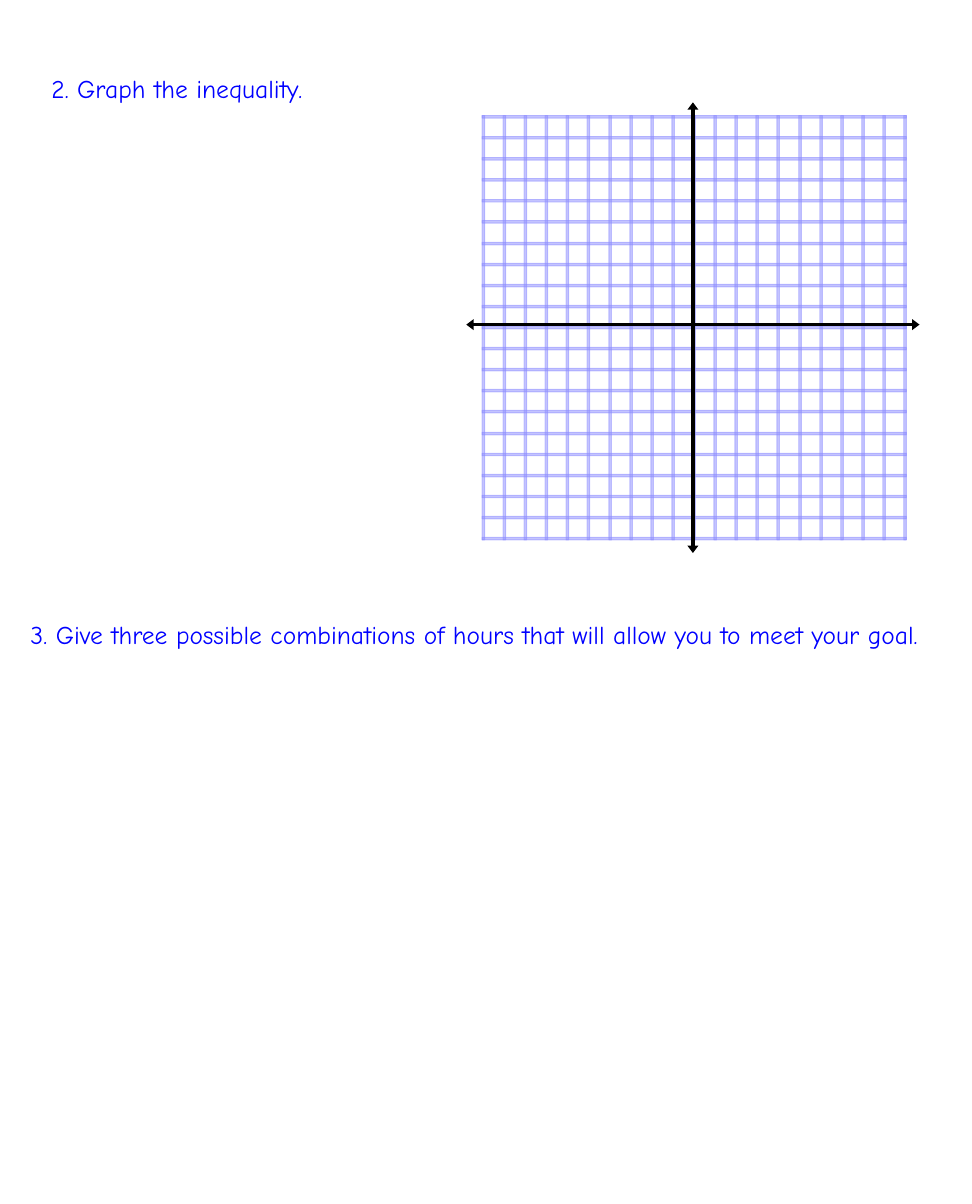
from pptx import Presentation
from pptx import util as u
from pptx.dml.color import RGBColor
from pptx.enum import shapes, text
from pptx.oxml.ns import qn
from lxml import etree

PX = u.Inches(1) // 100
FONT = "Comic Neue"
TEXT_BLUE = "0000FF"
GRID_BLUE = "8C8CFF"
BLACK = "000000"

CELLS = 20
GRID_LEFT, GRID_TOP = 551, 132
GRID_SIZE = 482
BAR = 3


def px(n):
    return u.Emu(n * PX)


def rgb(value):
    return RGBColor.from_string(value)


def add_text(slide, content, x, y, w, h, size=21, color=TEXT_BLUE, font=FONT):
    s = slide.shapes.add_textbox(px(x), px(y), px(w), px(h))
    tf = s.text_frame
    tf.word_wrap = True
    tf.auto_size = text.MSO_AUTO_SIZE.SHAPE_TO_FIT_TEXT
    r = tf.paragraphs[0].add_run()
    r.text = content
    r.font.size = u.Pt(size)
    r.font.name = font
    r.font.color.rgb = rgb(color)


def add_bar(group, x, y, w, h, color=GRID_BLUE, opacity=51):
    s = group.shapes.add_shape(shapes.MSO_SHAPE.RECTANGLE, px(x), px(y), px(w), px(h))
    s.shadow.inherit = False
    s.fill.solid()
    s.fill.fore_color.rgb = rgb(color)
    s.line.color.rgb = rgb(color)
    s.line.width = u.Pt(0)
    for clr in s._element.spPr.iter(qn("a:srgbClr")):
        etree.SubElement(clr, qn("a:alpha"), val=str(opacity * 1000))


def add_axis(group, x1, y1, x2, y2, color=BLACK, width=3):
    s = group.shapes.add_connector(
        shapes.MSO_CONNECTOR.STRAIGHT, px(x1), px(y1), px(x2), px(y2))
    s.line.color.rgb = rgb(color)
    s.line.width = u.Pt(width)
    ln = s.line._get_or_add_ln()
    for end in ("a:headEnd", "a:tailEnd"):
        etree.SubElement(ln, qn(end), type="triangle", w="med", len="sm")
    etree.SubElement(s._element.spPr, qn("a:effectLst"))


def add_grid(slide):
    group = slide.shapes.add_group_shape()
    for i in range(CELLS + 1):
        offset = round(i * GRID_SIZE / CELLS)
        add_bar(group, GRID_LEFT + offset, GRID_TOP, BAR, GRID_SIZE + BAR)
        add_bar(group, GRID_LEFT, GRID_TOP + offset, GRID_SIZE + BAR, BAR)
    add_axis(group, 792, 632, 792, 117)
    add_axis(group, 533, 371, 1051, 371)


def main():
    prs = Presentation()
    prs.slide_width, prs.slide_height = px(1111), px(1376)
    slide = prs.slides.add_slide(prs.slide_layouts[6])
    add_text(slide, "2. Graph the inequality.", 49, 79, 472, 45)
    add_text(slide, "3. Give three possible combinations of hours that will allow you to meet your goal.",
             25, 703, 1125, 45)
    add_grid(slide)
    prs.save("out.pptx")


if __name__ == "__main__":
    main()
